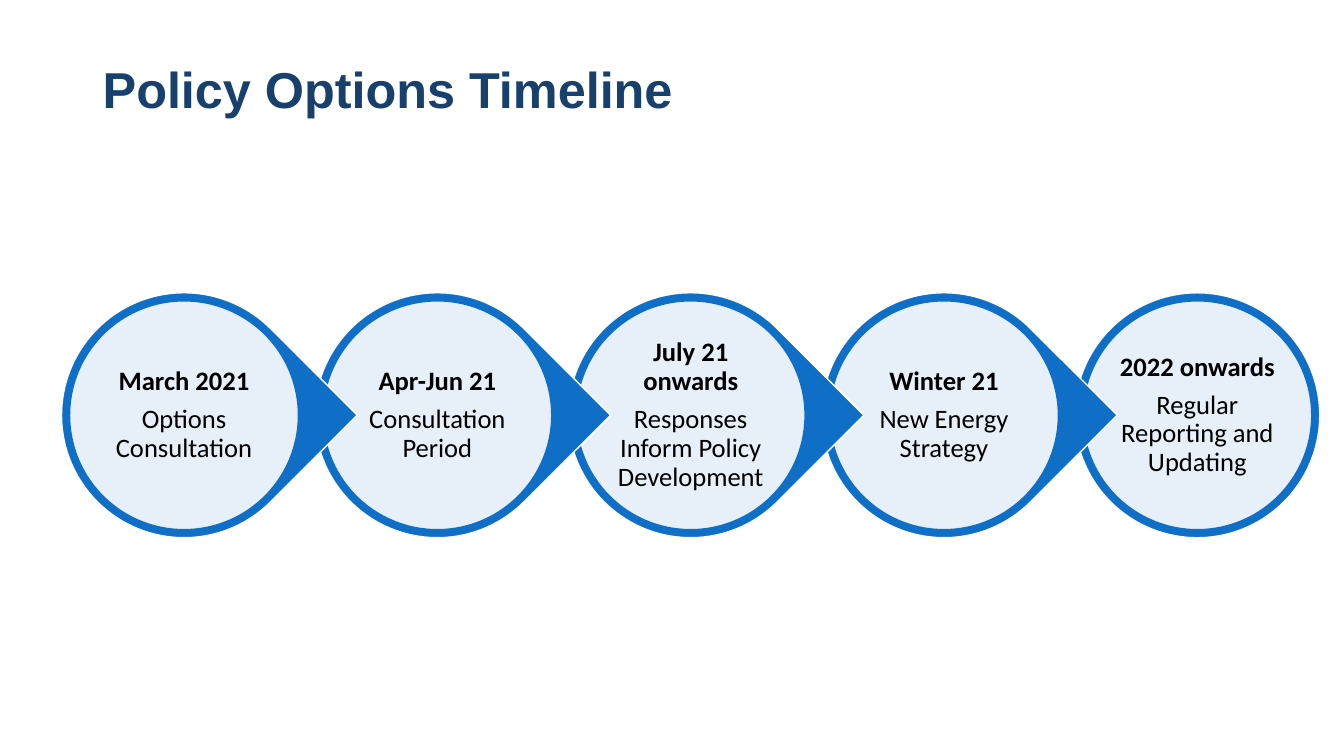
from pptx import Presentation
from pptx import util as u
from pptx.dml.color import RGBColor
from pptx.enum import shapes, text
from pptx.oxml.ns import qn
from lxml import etree

NAVY = RGBColor(0x17, 0x40, 0x6D)
BLUE = RGBColor(0x0F, 0x6F, 0xC6)
WHITE = RGBColor(0xFF, 0xFF, 0xFF)
BLACK = RGBColor(0x00, 0x00, 0x00)

WIDTH, HEIGHT = 13.33, 7.5
LEFT = 0.61
COLUMN = 10.05 / 4
DROP, DISC, LABEL = 2.43, 2.27, 1.62
MIDDLE = 4.12

STEPS = [
    ("March 2021", "Options Consultation"),
    ("Apr-Jun 21", "Consultation Period"),
    ("July 21 onwards", "Responses Inform Policy Development"),
    ("Winter 21", "New Energy Strategy"),
    ("2022 onwards", "Regular Reporting and Updating"),
]


class Timeline:
    def __init__(self, deck):
        self.slide = deck.slides.add_slide(deck.slide_layouts[6])
        self.head = ("Arial", 36, NAVY)
        self.body = ("Calibri", 19, BLACK)

    def cell(self, col, size):
        x = LEFT + col * COLUMN + DROP / 2
        return [u.Inches(n) for n in (x - size / 2, MIDDLE - size / 2, size, size)]

    def shape(self, kind, box, fill, line):
        item = self.slide.shapes.add_shape(kind, *box)
        item.shadow.inherit = False
        item.fill.solid()
        item.fill.fore_color.rgb = fill
        item.line.color.rgb = line
        item.line.width = u.Pt(1)
        return item

    def drop(self, col, last):
        kind = shapes.MSO_SHAPE.OVAL if last else shapes.MSO_SHAPE.TEAR
        item = self.shape(kind, self.cell(col, DROP), BLUE, WHITE)
        if not last:
            item.adjustments[0] = 1
            item.rotation = 45

    def disc(self, col):
        item = self.shape(shapes.MSO_SHAPE.OVAL, self.cell(col, DISC), WHITE, BLUE)
        color = item.fill._xPr.find(".//" + qn("a:srgbClr"))
        etree.SubElement(color, qn("a:alpha"), val="90000")

    def frame(self, box, inset=None):
        frame = self.slide.shapes.add_textbox(*box).text_frame
        frame.word_wrap = True
        frame.vertical_anchor = text.MSO_ANCHOR.MIDDLE
        if inset is not None:
            frame.margin_left = frame.margin_right = u.Inches(inset)
            frame.margin_top = frame.margin_bottom = u.Inches(inset)
        return frame

    def run(self, para, words, style, bold):
        para.line_spacing = 0.9
        run = para.add_run()
        run.text = words
        run.font.name, size, run.font.color.rgb = style
        run.font.size = u.Pt(size)
        run.font.bold = bold

    def title(self, words):
        box = [u.Inches(n) for n in (0.92, 0.4, 9.62, 1.03)]
        self.run(self.frame(box).paragraphs[0], words, self.head, True)

    def label(self, col, date, task):
        frame = self.frame(self.cell(col, LABEL), 0.03)
        first, second = frame.paragraphs[0], frame.add_paragraph()
        for para, words, bold in ((first, date, True), (second, task, False)):
            para.alignment = text.PP_ALIGN.CENTER
            para.space_after = u.Pt(6.65)
            self.run(para, words, self.body, bold)


def main():
    deck = Presentation()
    deck.slide_width = u.Inches(WIDTH)
    deck.slide_height = u.Inches(HEIGHT)
    line = Timeline(deck)
    line.title("Policy Options Timeline")
    for col, (date, task) in reversed(list(enumerate(STEPS))):
        line.drop(col, col == len(STEPS) - 1)
        line.disc(col)
        line.label(col, date, task)
    deck.save("out.pptx")


if __name__ == "__main__":
    main()
